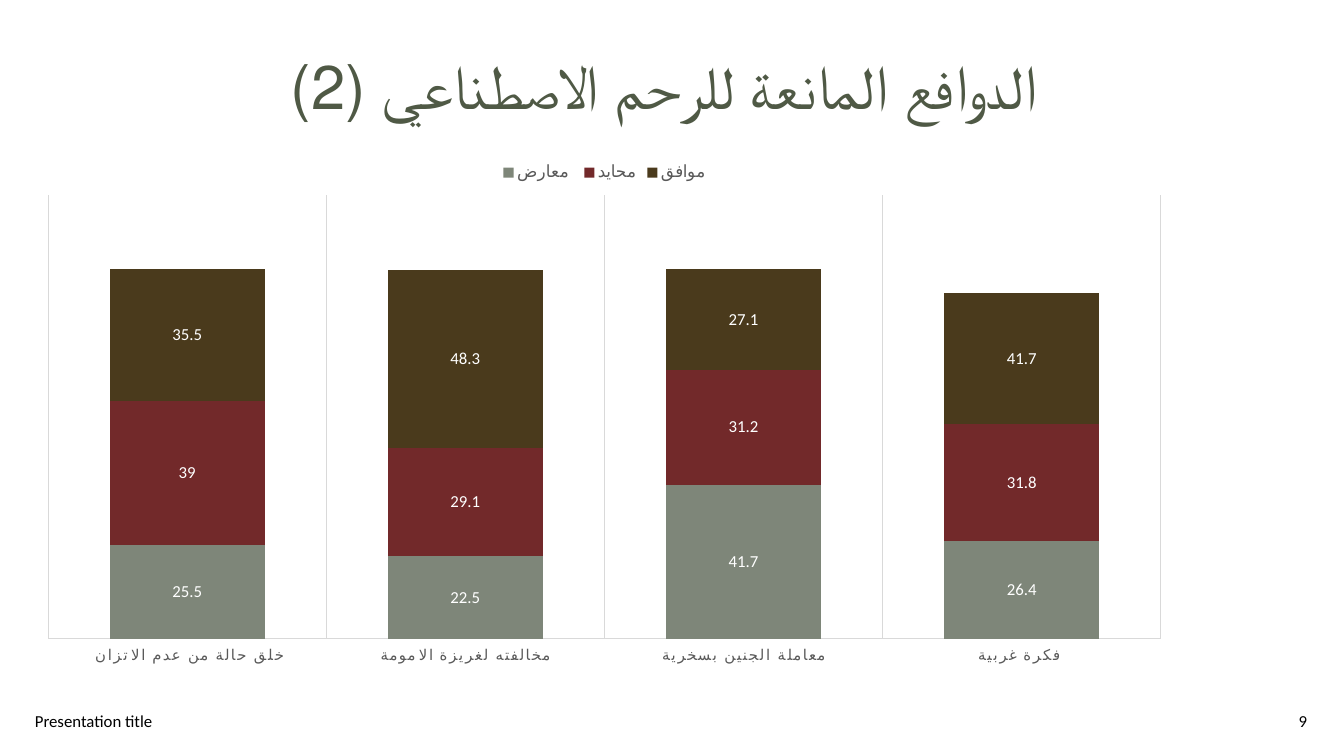
from pptx import Presentation
from pptx.chart.data import CategoryChartData
from pptx.dml.color import RGBColor
from pptx.enum.chart import (XL_CHART_TYPE, XL_LABEL_POSITION,
                             XL_LEGEND_POSITION, XL_TICK_LABEL_POSITION, XL_TICK_MARK)
from pptx.enum.text import MSO_ANCHOR, MSO_AUTO_SIZE, PP_ALIGN
from pptx.util import Pt

PX = 914400 / 100.8
THEME = {
    "title": ("Times New Roman", 44, "4F5945"),
    "footer": ("Calibri", 12, "000000"),
    "chart": ("Calibri", 10, "000000"),
    "axis": ("Calibri", 10.6, "595959"),
    "legend": ("Calibri", 12, "595959"),
    "label": ("Calibri", 12, "FFFFFF"),
    "grid": "D9D9D9",
    "series": ["7E8679", "72292A", "4A3A1C"],
}


def px(*lengths):
    return [round(n * PX) for n in lengths]


def style(font, role):
    font.name, size, color = THEME[role]
    font.size = Pt(size)
    font.bold = False
    font.color.rgb = RGBColor.from_string(color)


prs = Presentation()
prs.slide_width, prs.slide_height = px(1344, 756)
s = prs.slides.add_slide(prs.slide_layouts[5])

# Title
title = s.shapes.title
title.left, title.top, title.width, title.height = px(93, 42, 1159, 95)
tf = title.text_frame
tf.text = "الدوافع المانعة للرحم الاصطناعي (2) "
tf.auto_size = MSO_AUTO_SIZE.NONE
tf.vertical_anchor = MSO_ANCHOR.MIDDLE
p = tf.paragraphs[0]
p.alignment = PP_ALIGN.CENTER
p.line_spacing = 0.9
style(p.font, "title")

# Footer and slide number
for text, left, width, align in [
    ("Presentation title", 25, 454, PP_ALIGN.LEFT),
    ("9", 1015, 302, PP_ALIGN.RIGHT),
]:
    tf = s.shapes.add_textbox(*px(left, 701, width, 40)).text_frame
    tf.word_wrap = True
    tf.vertical_anchor = MSO_ANCHOR.MIDDLE
    p = tf.paragraphs[0]
    p.text = text
    p.alignment = align
    style(p.font, "footer")

# Stacked column chart
data = CategoryChartData()
data.categories = [" خلق حالة من عدم الاتزان", "مخالفته لغريزة الامومة",
                   "معاملة الجنين بسخرية", "فكرة غربية "]
data.add_series("معارض ", [25.5, 22.5, 41.7, 26.4])
data.add_series("محايد", [39, 29.1, 31.2, 31.8])
data.add_series("موافق", [35.5, 48.3, 27.1, 35.5])
chart = s.shapes.add_chart(XL_CHART_TYPE.COLUMN_STACKED, *px(25, 153, 1159, 521), data).chart
chart.has_title = False
style(chart.font, "chart")

# Legend
chart.has_legend = True
chart.legend.position = XL_LEGEND_POSITION.TOP
chart.legend.include_in_layout = False
style(chart.legend.font, "legend")

# Axes
cat = chart.category_axis
cat.major_tick_mark = cat.minor_tick_mark = XL_TICK_MARK.NONE
cat.tick_label_position = XL_TICK_LABEL_POSITION.LOW
cat.has_major_gridlines = True
for line in (cat.format.line, cat.major_gridlines.format.line):
    line.color.rgb = RGBColor.from_string(THEME["grid"])
    line.width = Pt(0.75)
style(cat.tick_labels.font, "axis")
cat.tick_labels.font._element.set("spc", "120")
val = chart.value_axis
val.visible = False
val.has_major_gridlines = False
val.minimum_scale, val.maximum_scale = 0, 120

# Series and labels
plot = chart.plots[0]
plot.gap_width, plot.overlap = 79, 100
plot.vary_by_categories = False
for series, color in zip(plot.series, THEME["series"]):
    series.format.fill.solid()
    series.format.fill.fore_color.rgb = RGBColor.from_string(color)
    labels = series.data_labels
    labels.show_value = True
    labels.position = XL_LABEL_POSITION.CENTER
    style(labels.font, "label")

# The last column's top label has its own wording
label = plot.series[2].points[3].data_label
label.position = XL_LABEL_POSITION.CENTER
p = label.text_frame.paragraphs[0]
r = p.add_run()
r.text = "41.7"
style(r.font, "label")

prs.save("out.pptx")
